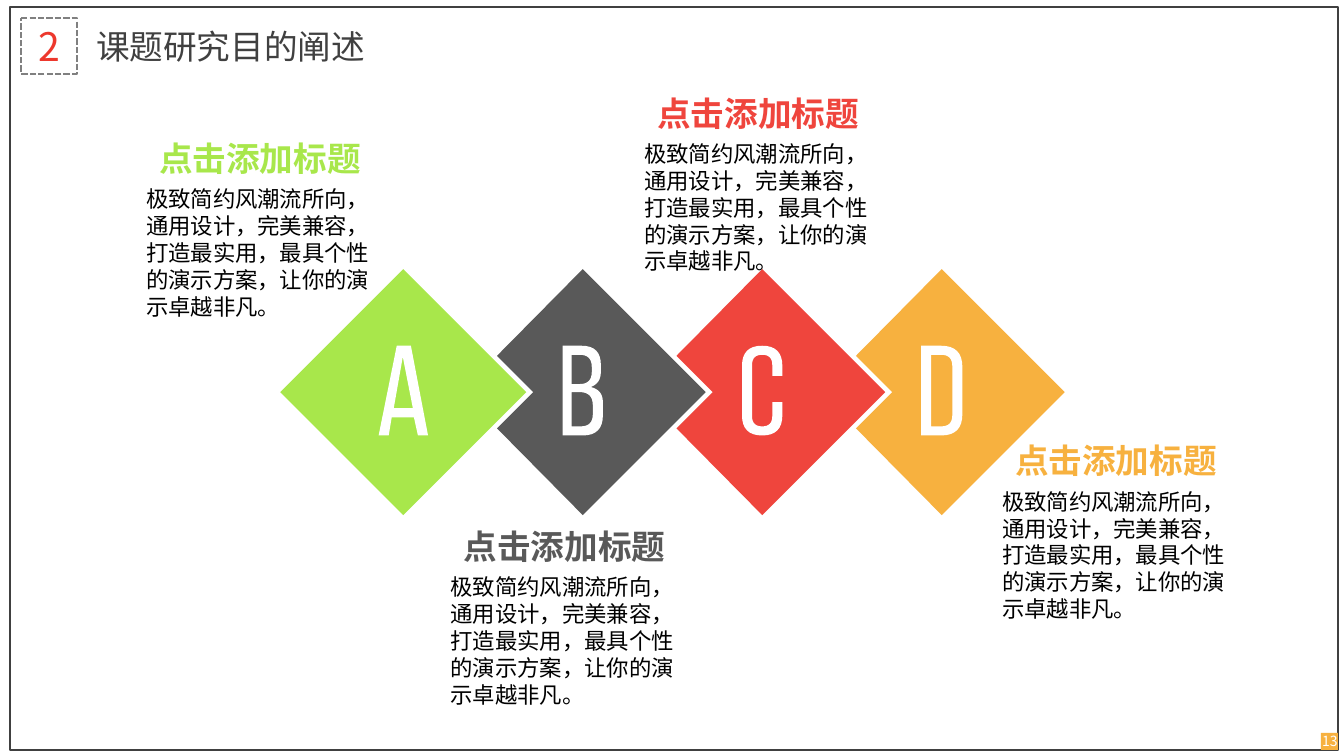
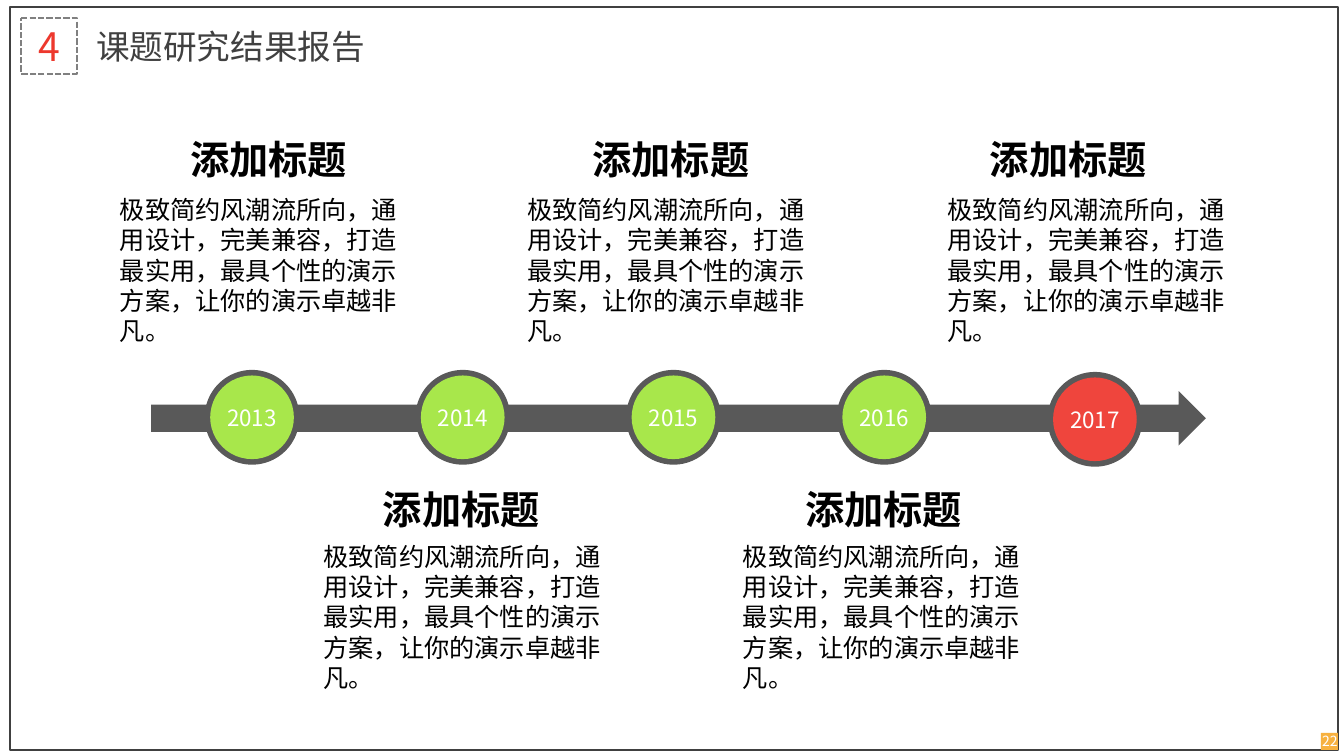
from dataclasses import dataclass
from itertools import cycle

from lxml import etree
from pptx import Presentation
from pptx.dml.color import RGBColor
from pptx.enum.dml import MSO_LINE_DASH_STYLE as Dash
from pptx.enum.shapes import MSO_SHAPE as Shape
from pptx.enum.text import MSO_ANCHOR as Anchor, PP_ALIGN as Align
from pptx.oxml.ns import qn
from pptx.util import Inches, Pt


@dataclass(frozen=True)
class Theme:
    green: str = "A8E74B"
    gray: str = "595959"
    red: str = "EF453D"
    orange: str = "F7B13F"
    number_red: str = "ED382D"
    ink: str = "404040"
    dash_gray: str = "808080"
    black: str = "000000"
    white: str = "FFFFFF"
    font: str = "Noto Sans CJK SC"
    display_font: str = "TeX Gyre Adventor"
    large: int = 28
    title: int = 24
    body: int = 18
    small: int = 16
    footer: int = 10


THEME = Theme()
BODY = "极致简约风潮流所向，通用设计，完美兼容，打造最实用，最具个性的演示方案，让你的演示卓越非凡。"

# Letter contours in inches from the letter's top left: x, y and corner radius
LETTERS = {
    "A": [
        [(.13, .71, 0), (.10, .89, 0), (0, .89, 0), (.18, 0, 0),
         (.32, 0, 0), (.49, .89, 0), (.39, .89, 0), (.35, .71, 0)],
        [(.15, .62, 0), (.34, .62, 0), (.24, .11, 0)],
    ],
    "B": [
        [(0, 0, 0), (.38, 0, .19), (.38, .38, .12), (.28, .41, 0),
         (.40, .44, .12), (.40, .89, .20), (0, .89, 0)],
        [(.09, .09, 0), (.29, .09, .12), (.29, .38, .12), (.09, .38, 0)],
        [(.09, .46, 0), (.30, .46, .13), (.30, .80, .12), (.09, .80, 0)],
    ],
    "C": [
        [(.40, .30, 0), (.30, .30, 0), (.30, .09, .10), (.10, .09, .10),
         (.10, .80, .10), (.30, .80, .10), (.30, .56, 0), (.40, .56, 0),
         (.40, .89, .20), (0, .89, .20), (0, 0, .20), (.40, 0, .20)],
    ],
    "D": [
        [(0, 0, 0), (.41, 0, .21), (.41, .89, .21), (0, .89, 0)],
        [(.10, .09, 0), (.31, .09, .11), (.31, .80, .11), (.10, .80, 0)],
    ],
}


def paint(shape, fill=None, line=None, width=1, dash=None):
    shape.shadow.inherit = False
    if fill:
        shape.fill.solid()
        shape.fill.fore_color.rgb = RGBColor.from_string(fill)
    else:
        shape.fill.background()
    if line:
        shape.line.color.rgb = RGBColor.from_string(line)
        shape.line.width = Pt(width)
        if dash:
            shape.line.dash_style = dash
    else:
        shape.line.fill.background()
    return shape


def write(shape, text, size, color, font=THEME.font, bold=False,
          align=Align.LEFT, anchor=Anchor.TOP, wrap=True, inset=None):
    frame = shape.text_frame
    settings = {"word_wrap": wrap, "vertical_anchor": anchor}
    if inset is not None:
        for side in ("left", "top", "right", "bottom"):
            settings["margin_" + side] = Inches(inset)
    for name, value in settings.items():
        setattr(frame, name, value)
    para = frame.paragraphs[0]
    para.alignment = align
    span = para.add_run()
    span.text = text
    for name, value in {"size": Pt(size), "name": font, "bold": bold}.items():
        setattr(span.font, name, value)
    span.font.color.rgb = RGBColor.from_string(color)
    east_asian = etree.SubElement(span.font._element, qn("a:ea"))
    east_asian.set("typeface", THEME.font)


def add_box(page, kind, box, **look):
    return paint(page.shapes.add_shape(kind, *map(Inches, box)), **look)


def add_text(page, box, text, size, color, **style):
    write(page.shapes.add_textbox(*map(Inches, box)), text, size, color, **style)


def add_outline(page, left, top, contours, fill):
    """Draw closed contours, given in inches from left and top, as one shape."""
    placed = [[(Inches(left + x), Inches(top + y)) for x, y in contour]
              for contour in contours]
    builder = page.shapes.build_freeform(*placed[0][0])
    for index, (start, *rest) in enumerate(placed):
        if index:
            builder.move_to(*start)
        builder.add_line_segments(rest, close=True)
    paint(builder.convert_to_shape(), fill=fill)


def round_corners(corners, steps=8):
    """Replace each corner that has a radius by a quadratic curve."""
    points = []
    for index, (x, y, radius) in enumerate(corners):
        if not radius:
            points.append((x, y))
            continue
        ends = []
        for near_x, near_y, _ in (corners[index - 1],
                                  corners[(index + 1) % len(corners)]):
            length = ((near_x - x) ** 2 + (near_y - y) ** 2) ** .5
            ends.append((x + (near_x - x) * radius / length,
                         y + (near_y - y) * radius / length))
        (from_x, from_y), (to_x, to_y) = ends
        for step in range(steps + 1):
            t = step / steps
            a, b, c = (1 - t) ** 2, 2 * t * (1 - t), t ** 2
            points.append((a * from_x + b * x + c * to_x,
                           a * from_y + b * y + c * to_y))
    return points


def add_page(deck, section, title, number):
    page = deck.slides.add_slide(deck.slide_layouts[6])
    # Frame
    add_box(page, Shape.RECTANGLE, (.1, .07, 13.17, 7.37), line=THEME.ink)
    # Section number and title
    badge = add_box(page, Shape.ROUNDED_RECTANGLE, (.21, .18, .55, .55),
                    line=THEME.dash_gray, width=1.5, dash=Dash.SQUARE_DOT)
    badge.adjustments[0] = 0
    write(badge, section, THEME.large, THEME.number_red,
          align=Align.CENTER, anchor=Anchor.MIDDLE, inset=0)
    heading = add_box(page, Shape.ROUNDED_RECTANGLE, (.84, .18, 3.59, .55))
    heading.adjustments[0] = .09
    write(heading, title, THEME.title, THEME.ink, anchor=Anchor.MIDDLE)
    # Page number
    add_box(page, Shape.RECTANGLE, (13.1, 7.27, .17, .17), fill=THEME.orange)
    add_text(page, (12.97, 7.27, .44, .17), number, THEME.footer, THEME.white,
             align=Align.CENTER, anchor=Anchor.MIDDLE)
    return page


def add_diamond(page, center_x, center_y, color, notched):
    half, notch, depth = 1.22, .36, .49
    if notched:
        edge = notch + depth
        add_outline(page, center_x, center_y, [[
            (0, -half), (-edge, -notch), (-depth, 0), (-edge, notch),
            (0, half), (half, 0)]], color)
    else:
        add_box(page, Shape.DIAMOND, (center_x - half, center_y - half,
                                      2 * half, 2 * half), fill=color)


def add_letter(page, center_x, center_y, letter):
    contours = [round_corners(corners) for corners in LETTERS[letter]]
    width = max(x for x, _ in contours[0])
    add_outline(page, center_x - width / 2, center_y - .46, contours, THEME.white)


def add_diamond_note(page, left, top, color):
    add_text(page, (left, top + .47, 2.62, 1.45), BODY, THEME.small, THEME.black)
    add_text(page, (left + .13, top, 2.22, .5), "点击添加标题", THEME.title, color,
             font=THEME.display_font, bold=True, wrap=False)


def build_purpose(deck):
    page = add_page(deck, "2", "课题研究目的阐述", "13")
    first_x, center_y, pitch = 4, 3.89, 1.78
    colors = (THEME.green, THEME.gray, THEME.red, THEME.orange)
    centers = [first_x + index * pitch for index in range(len(colors))]
    # Chain of diamonds, the rightmost at the back
    for index in reversed(range(len(colors))):
        add_diamond(page, centers[index], center_y, colors[index], index > 0)
    for center_x, letter in zip(centers, LETTERS):
        add_letter(page, center_x, center_y, letter)
    # Notes
    places = ((1.35, 1.32), (4.37, 5.17), (6.29, .87), (9.84, 4.32))
    for (left, top), color in zip(places, colors):
        add_diamond_note(page, left, top, color)


def add_milestone(page, left, top, year, color):
    ring, disc = .94, .83
    gap = (ring - disc) / 2
    add_box(page, Shape.OVAL, (left, top, ring, ring), fill=THEME.gray)
    face = add_box(page, Shape.OVAL, (left + gap, top + gap, disc, disc), fill=color)
    write(face, year, THEME.small, THEME.white,
          align=Align.CENTER, anchor=Anchor.MIDDLE, inset=0)


def add_year_note(page, heading_left, body_left, top, body_top):
    add_text(page, (heading_left, top, 1.77, .57), "添加标题", THEME.large,
             THEME.black, bold=True, wrap=False)
    add_text(page, (body_left, body_top, 3, 1.61), BODY, THEME.body, THEME.black)


def build_results(deck):
    page = add_page(deck, "4", "课题研究结果报告", "22")
    # Timeline
    add_box(page, Shape.RIGHT_ARROW, (1.5, 3.88, 10.46, .54), fill=THEME.gray)
    for index, year in enumerate(range(2013, 2018)):
        latest = year == 2017
        add_milestone(page, 2.03 + index * 2.09, 3.69 if latest else 3.67,
                      str(year), THEME.red if latest else THEME.green)
    # Notes, in turn above and below the arrow
    lefts = ((1.79, 1.09), (3.7, 3.11), (5.78, 5.13), (7.89, 7.27), (9.72, 9.3))
    rows = cycle(((1.29, 1.88), (4.77, 5.32)))
    for note_lefts, note_tops in zip(lefts, rows):
        add_year_note(page, *note_lefts, *note_tops)


def main():
    deck = Presentation()
    deck.slide_width, deck.slide_height = Inches(13.33), Inches(7.5)
    build_purpose(deck)
    build_results(deck)
    deck.save("out.pptx")


if __name__ == "__main__":
    main()
